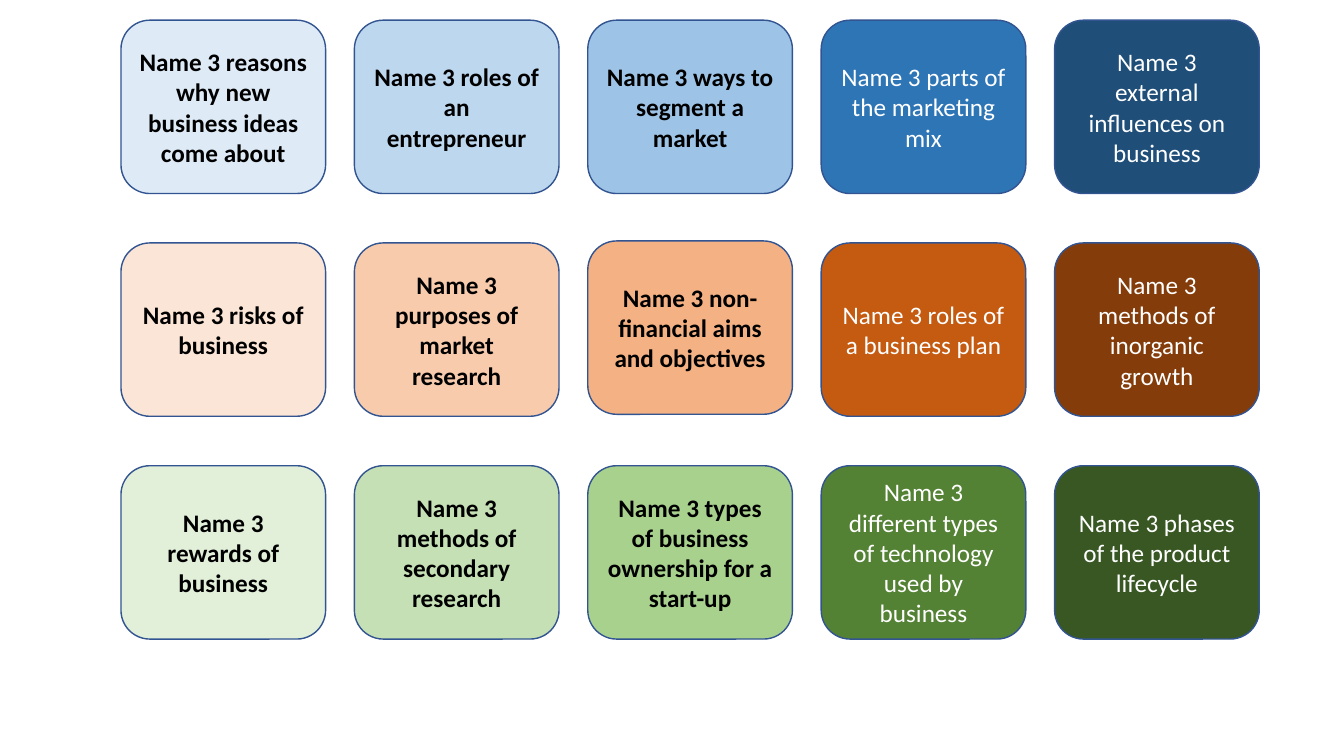
from pptx import Presentation
from pptx import util as u
from pptx.dml.color import RGBColor
from pptx.enum import shapes, text

COLORS = {
    "outline": "325491", "dark_text": "000000", "light_text": "FFFFFF",
    "blue1": "DEEBF7", "blue2": "BDD7EE", "blue3": "9DC3E6", "blue4": "2E75B6", "blue5": "1F4E79",
    "orange1": "FBE5D6", "orange2": "F8CBAD", "orange3": "F4B183", "orange4": "C55A11", "orange5": "843C0B",
    "green1": "E2F0D9", "green2": "C5E0B4", "green3": "A9D18E", "green4": "548235", "green5": "385723",
}

# Questions by row, from lightest to darkest card
QUESTIONS = {
    "blue": ["Name 3 reasons why new business ideas come about",
             "Name 3 roles of an entrepreneur",
             "Name 3 ways to segment a market",
             "Name 3 parts of the marketing mix",
             "Name 3 external influences on business"],
    "orange": ["Name 3 risks of business",
               "Name 3 purposes of market research",
               "Name 3 non-financial aims and objectives",
               "Name 3 roles of a business plan",
               "Name 3 methods of inorganic growth"],
    "green": ["Name 3 rewards of business",
              "Name 3 methods of secondary research",
              "Name 3 types of business ownership for a start-up",
              "Name 3 different types of technology used by business",
              "Name 3 phases of the product lifecycle"],
}

GRID = (1.2, 0.2, 11.29, 6.14)  # left, top, width, height in inches
CARD_W, CARD_H = 2.03, 1.72
BOLD_COLUMNS = 3  # the light cards carry bold dark text
LIFTS = {("orange", 3): 0.02}  # cards raised slightly above their row


def rgb(name):
    return RGBColor.from_string(COLORS[name])


def add_card(slide, left, top, fill, question, bold):
    sp = slide.shapes.add_shape(shapes.MSO_SHAPE.ROUNDED_RECTANGLE,
                                u.Inches(left), u.Inches(top), u.Inches(CARD_W), u.Inches(CARD_H))
    sp.shadow.inherit = False
    sp.fill.solid()
    sp.fill.fore_color.rgb = rgb(fill)
    sp.line.color.rgb = rgb("outline")
    sp.line.width = u.Pt(1)

    tf = sp.text_frame
    tf.word_wrap = True
    tf.vertical_anchor = text.MSO_ANCHOR.MIDDLE
    tf.text = question
    p = tf.paragraphs[0]
    p.alignment = text.PP_ALIGN.CENTER
    r = p.runs[0]
    r.font.name = "Calibri"
    r.font.size = u.Pt(18)
    r.font.bold = bold
    r.font.color.rgb = rgb("dark_text" if bold else "light_text")


def add_question_grid(slide, box):
    left, top, width, height = box
    row_step = (height - CARD_H) / (len(QUESTIONS) - 1)
    for row, (hue, questions) in enumerate(QUESTIONS.items()):
        col_step = (width - CARD_W) / (len(questions) - 1)
        for col, question in enumerate(questions):
            lift = LIFTS.get((hue, col + 1), 0)
            add_card(slide, left + col * col_step, top + row * row_step - lift,
                     f"{hue}{col + 1}", question, col < BOLD_COLUMNS)


def main():
    prs = Presentation()
    prs.slide_width, prs.slide_height = u.Inches(13.33), u.Inches(7.5)
    slide = prs.slides.add_slide(prs.slide_layouts[6])
    add_question_grid(slide, GRID)
    prs.save("out.pptx")


if __name__ == "__main__":
    main()
